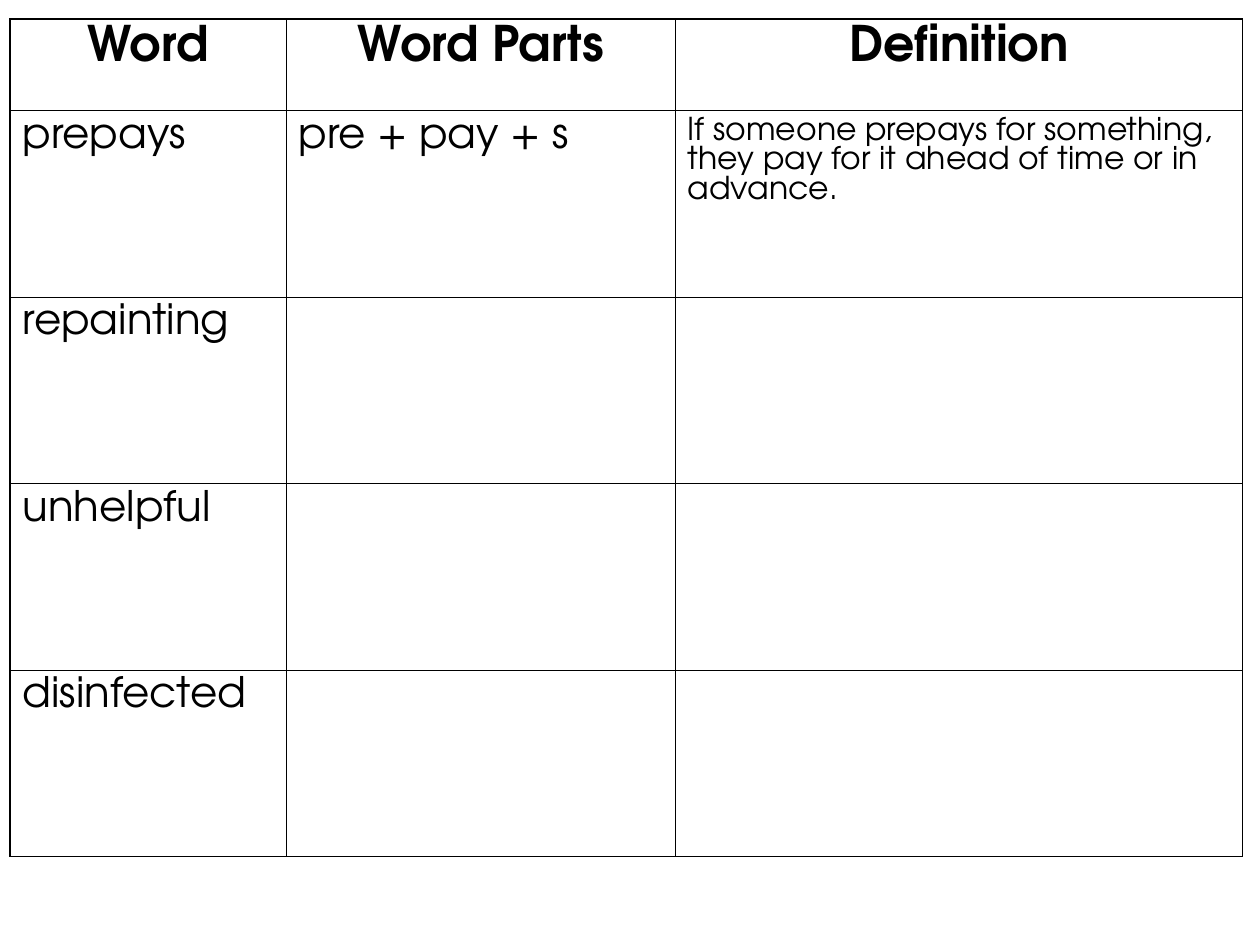
import dataclasses

import pptx
import pptx.dml.color
import pptx.enum.text
import pptx.oxml
import pptx.oxml.ns
import pptx.util

COLOURS = {"ink": "000000", "paper": "FFFFFF"}
FONT = "TeX Gyre Adventor"
SLIDE_WIDTH, SLIDE_HEIGHT = 10, 7.5
TABLE_LEFT, TABLE_TOP = 0.08, 0.15
COLUMN_WIDTHS = [2.19, 3.09, 4.5]
HEADER_HEIGHT, ROW_HEIGHT = 0.73, 1.48
OUTER_LINE, INNER_LINE = 1, 0.5


@dataclasses.dataclass
class WordEntry:
    word: str
    parts: str = ""
    definition: str = ""


HEADINGS = WordEntry("Word", "Word Parts", "Definition")
ENTRIES = [
    WordEntry(
        "prepays",
        "pre + pay + s",
        "If someone prepays for something, they pay for it ahead of time or in advance.",
    ),
    WordEntry("repainting"),
    WordEntry("unhelpful"),
    WordEntry("disinfected"),
]
HEADING_FORMAT = {"name": FONT, "size": pptx.util.Pt(28), "bold": True}
WORD_FORMAT = {"name": FONT, "size": pptx.util.Pt(24), "bold": False}
DEFINITION_FORMAT = {**WORD_FORMAT, "size": pptx.util.Pt(18)}


def write_cell(cell, text: str, text_format: dict, centred: bool) -> None:
    cell.fill.solid()
    cell.fill.fore_color.rgb = pptx.dml.color.RGBColor.from_string(COLOURS["paper"])
    if not text:
        return
    para = cell.text_frame.paragraphs[0]
    if centred:
        para.alignment = pptx.enum.text.PP_ALIGN.CENTER
    span = para.add_run()
    span.text = text
    for attribute, value in text_format.items():
        setattr(span.font, attribute, value)
    span.font.color.rgb = pptx.dml.color.RGBColor.from_string(COLOURS["ink"])


def draw_borders(cell, outer_sides: dict[str, bool]) -> None:
    properties = cell._tc.get_or_add_tcPr()
    for position, (side, is_outer) in enumerate(outer_sides.items()):
        width = pptx.util.Pt(OUTER_LINE if is_outer else INNER_LINE)
        border = pptx.oxml.parse_xml(
            f'<a:{side} {pptx.oxml.ns.nsdecls("a")} w="{int(width)}"><a:solidFill>'
            f'<a:srgbClr val="{COLOURS["ink"]}"/></a:solidFill></a:{side}>'
        )
        properties.insert(position, border)


def add_word_table(page, records: list[WordEntry]) -> None:
    heights = [HEADER_HEIGHT] + [ROW_HEIGHT] * (len(records) - 1)
    frame = page.shapes.add_table(
        len(records),
        len(COLUMN_WIDTHS),
        *map(pptx.util.Inches, (TABLE_LEFT, TABLE_TOP, sum(COLUMN_WIDTHS), sum(heights))),
    )
    table = frame.table
    table.first_row = table.horz_banding = False
    for column, width in zip(table.columns, COLUMN_WIDTHS):
        column.width = pptx.util.Inches(width)
    last_row, last_column = len(records) - 1, len(COLUMN_WIDTHS) - 1
    for row, (record, height) in enumerate(zip(records, heights)):
        table.rows[row].height = pptx.util.Inches(height)
        formats = [HEADING_FORMAT] * 3 if row == 0 else [WORD_FORMAT, WORD_FORMAT, DEFINITION_FORMAT]
        for column, text in enumerate(dataclasses.astuple(record)):
            cell = table.cell(row, column)
            write_cell(cell, text, formats[column], centred=row == 0)
            draw_borders(
                cell,
                {
                    "lnL": column == 0,
                    "lnR": column == last_column,
                    "lnT": row == 0,
                    "lnB": row == last_row,
                },
            )


def main() -> None:
    deck = pptx.Presentation()
    deck.slide_width = pptx.util.Inches(SLIDE_WIDTH)
    deck.slide_height = pptx.util.Inches(SLIDE_HEIGHT)
    page = deck.slides.add_slide(deck.slide_layouts[6])
    add_word_table(page, [HEADINGS, *ENTRIES])
    deck.save("out.pptx")


if __name__ == "__main__":
    main()
